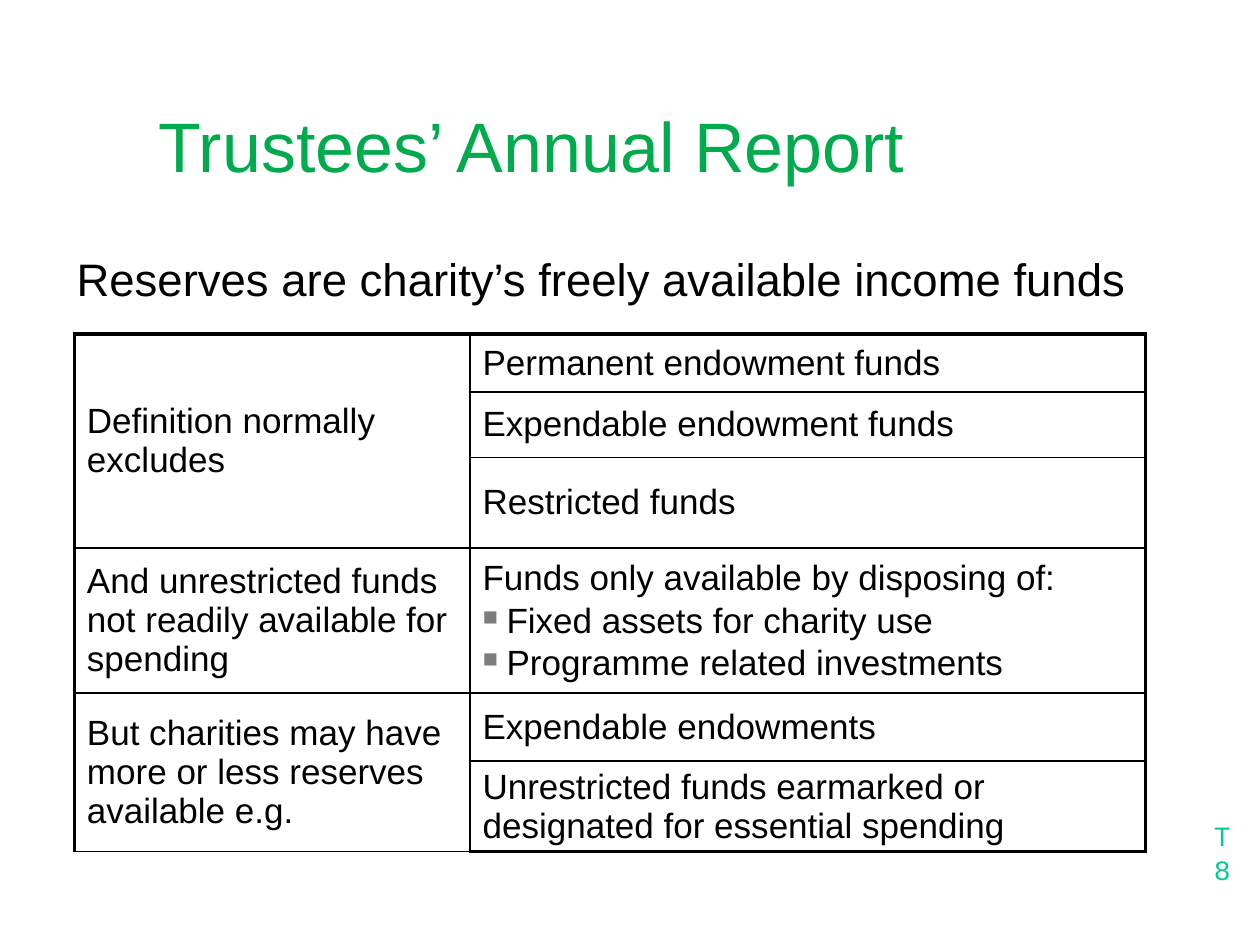
from lxml import etree
from pptx import Presentation
from pptx import util as u
from pptx.dml.color import RGBColor
from pptx.enum import text
from pptx.oxml import ns

GRID_COLUMNS, GRID_ROWS = 100, 75
CELL = u.Inches(10) // GRID_COLUMNS
BLACK = "000000"

COLUMN_SPANS = [31.4, 53.6]
ROW_SPANS = [4.6, 5.2, 7.1, 11.5, 5.4, 7]
TOPICS = [
    ("Definition normally excludes", [
        ["Permanent endowment funds"],
        ["Expendable endowment funds"],
        ["Restricted funds"],
    ]),
    ("And unrestricted funds not readily available for spending", [
        ["Funds only available by disposing of:",
         "Fixed assets for charity use",
         "Programme related investments"],
    ]),
    ("But charities may have more or less reserves available e.g.", [
        ["Expendable endowments"],
        ["Unrestricted funds earmarked or designated for essential spending"],
    ]),
]


def span(cells):
    return round(cells * CELL)


def colour(value):
    return RGBColor.from_string(value)


def style(paragraph, size, value, face="Arial"):
    for run in paragraph.runs:
        run.font.size = u.Pt(size)
        run.font.name = face
        run.font.color.rgb = colour(value)


def add_element(parent, tag, **attributes):
    return etree.SubElement(parent, ns.qn(tag), attributes)


def add_border(cell, side, width):
    line = add_element(cell._tc.get_or_add_tcPr(), f"a:ln{side}", w=str(u.Pt(width)))
    add_element(add_element(line, "a:solidFill"), "a:srgbClr", val=BLACK)


def frame_cell(cell, row, column):
    last_row, last_column = len(ROW_SPANS) - 1, len(COLUMN_SPANS) - 1
    outer_sides = {"L": column == 0, "R": column == last_column,
                   "T": row == 0, "B": row == last_row}
    for side, outer in outer_sides.items():
        add_border(cell, side, 2.25 if outer else 1)
    cell.fill.background()


def hang(paragraph):
    properties = paragraph._p.get_or_add_pPr()
    indent = u.Inches(0.19)
    properties.set("marL", str(indent))
    properties.set("indent", str(-indent))
    return properties


def add_bullet(paragraph):
    paragraph.line_spacing = 0.9
    paragraph.space_before = u.Pt(4)
    properties = hang(paragraph)
    add_element(add_element(properties, "a:buClr"), "a:srgbClr", val="7C7C7B")
    add_element(properties, "a:buSzPct", val="60000")
    add_element(properties, "a:buChar", char="■")


def fill_cell(cell, lines):
    cell.vertical_anchor = text.MSO_ANCHOR.MIDDLE
    cell.text_frame.text = "\n".join(lines)
    heading, *items = cell.text_frame.paragraphs
    if items:
        hang(heading)
    for item in items:
        add_bullet(item)
    for paragraph in cell.text_frame.paragraphs:
        style(paragraph, 20, BLACK)


def place_title(slide, box):
    title = slide.shapes.title
    title.left, title.top, title.width, title.height = map(span, box)
    frame = title.text_frame
    frame.text = "Trustees’ Annual Report"
    frame.margin_left = frame.margin_right = frame.margin_top = frame.margin_bottom = 0
    frame.vertical_anchor = text.MSO_ANCHOR.MIDDLE
    frame.paragraphs[0].alignment = text.PP_ALIGN.LEFT
    style(frame.paragraphs[0], 40, "00AB4E")


def place_text(slide, box, words, size, value, face="Arial",
               alignment=text.PP_ALIGN.LEFT, anchor=text.MSO_ANCHOR.TOP):
    frame = slide.shapes.add_textbox(*map(span, box)).text_frame
    frame.word_wrap = True
    frame.vertical_anchor = anchor
    frame.text = words
    frame.paragraphs[0].alignment = alignment
    style(frame.paragraphs[0], size, value, face)


def place_reserves_table(slide, box):
    table = slide.shapes.add_table(len(ROW_SPANS), len(COLUMN_SPANS), *map(span, box)).table
    table.first_row = table.horz_banding = False
    for column, width in zip(table.columns, COLUMN_SPANS):
        column.width = span(width)
    for row, height in zip(table.rows, ROW_SPANS):
        row.height = span(height)
    for row in range(len(ROW_SPANS)):
        for column in range(len(COLUMN_SPANS)):
            frame_cell(table.cell(row, column), row, column)
    first = 0
    for topic, funds in TOPICS:
        last = first + len(funds) - 1
        if last > first:
            table.cell(first, 0).merge(table.cell(last, 0))
        fill_cell(table.cell(first, 0), [topic])
        for row, lines in enumerate(funds, first):
            fill_cell(table.cell(row, 1), lines)
        first = last + 1


def main():
    deck = Presentation()
    deck.slide_width, deck.slide_height = span(GRID_COLUMNS), span(GRID_ROWS)
    slide = deck.slides.add_slide(deck.slide_layouts.get_by_name("Title Only"))
    place_title(slide, (12.6, 6, 85.2, 11))
    place_reserves_table(slide, (5.9, 26.5, sum(COLUMN_SPANS), sum(ROW_SPANS)))
    place_text(slide, (5.1, 19.4, 90.6, 5.4),
               "Reserves are charity’s freely available income funds", 26, BLACK)
    place_text(slide, (94.9, 65.8, 4.2, 3.7), "T8", 16, "00CC99", "Courier New",
               text.PP_ALIGN.CENTER, text.MSO_ANCHOR.MIDDLE)
    deck.save("out.pptx")


if __name__ == "__main__":
    main()
